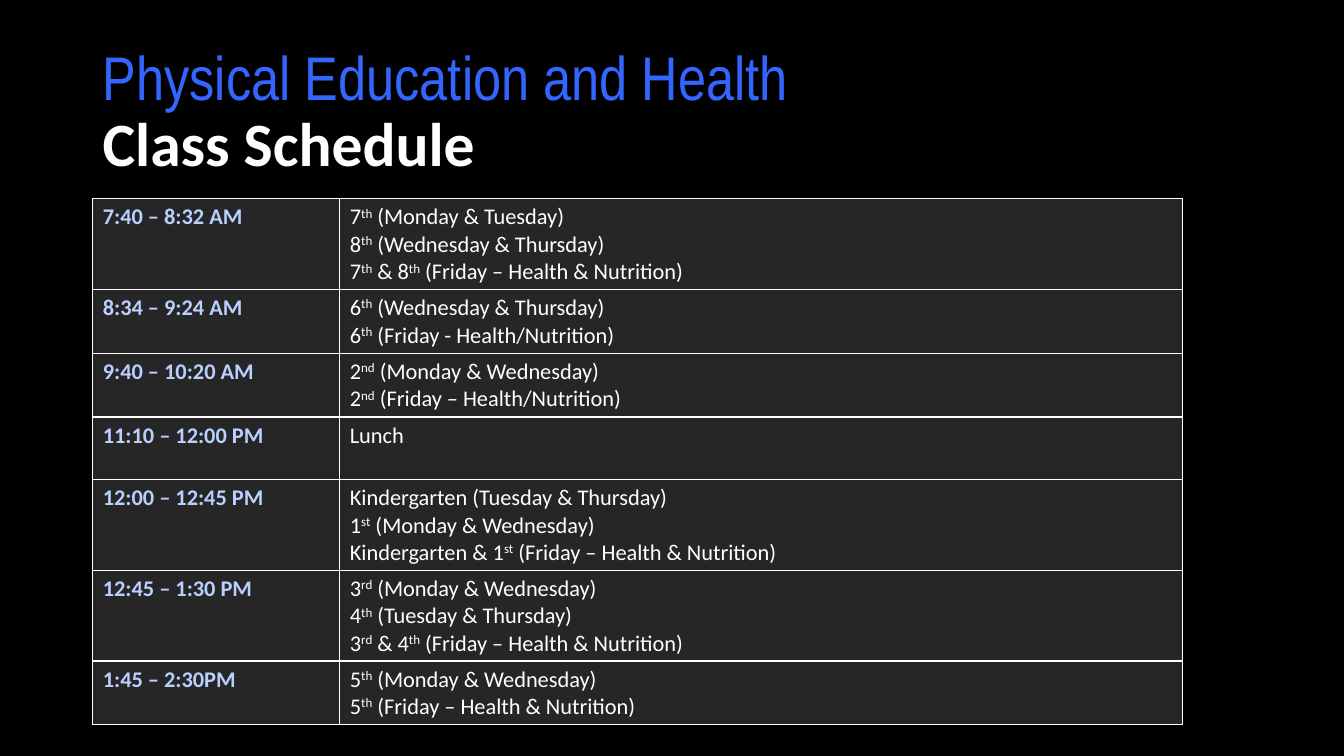
import dataclasses

import lxml.etree
import pptx
import pptx.dml.color
import pptx.enum.text
import pptx.oxml.ns
import pptx.table
import pptx.text.text
import pptx.util

BLACK = pptx.dml.color.RGBColor(0x00, 0x00, 0x00)
WHITE = pptx.dml.color.RGBColor(0xFF, 0xFF, 0xFF)
BLUE = pptx.dml.color.RGBColor(0x33, 0x66, 0xFF)
PALE_BLUE = pptx.dml.color.RGBColor(0xB9, 0xD0, 0xFF)
DARK_GREY = pptx.dml.color.RGBColor(0x26, 0x26, 0x26)

EMU_PER_PX = 9144
COLUMN_WIDTHS = (245, 836)
SUPERSCRIPT_MARK = "^"


@dataclasses.dataclass(frozen=True)
class TextStyle:
    font_name: str
    size: int
    color: pptx.dml.color.RGBColor
    bold: bool = False


@dataclasses.dataclass(frozen=True)
class Period:
    time: str
    classes: tuple[str, ...]
    height: int = 62


SUBJECT_STYLE = TextStyle("Arial Narrow", 44, BLUE)
HEADING_STYLE = TextStyle("Calibri", 44, WHITE, bold=True)
TIME_STYLE = TextStyle("Calibri", 16, PALE_BLUE, bold=True)
CLASS_STYLE = TextStyle("Calibri", 16, WHITE)

PERIODS = (
    Period("7:40 – 8:32 AM", (
        "7^th^ (Monday & Tuesday)",
        "8^th^ (Wednesday & Thursday)",
        "7^th^ & 8^th^ (Friday – Health & Nutrition)",
    ), 88),
    Period("8:34 – 9:24 AM", (
        "6^th^ (Wednesday & Thursday)",
        "6^th^ (Friday - Health/Nutrition)",
    )),
    Period("9:40 – 10:20 AM", (
        "2^nd^ (Monday & Wednesday)",
        "2^nd^ (Friday – Health/Nutrition)",
    )),
    Period("11:10 – 12:00 PM", ("Lunch",)),
    Period("12:00 – 12:45 PM", (
        "Kindergarten (Tuesday & Thursday)",
        "1^st^ (Monday & Wednesday)",
        "Kindergarten & 1^st^ (Friday – Health & Nutrition)",
    ), 88),
    Period("12:45 – 1:30 PM", (
        "3^rd^ (Monday & Wednesday)",
        "4^th^ (Tuesday & Thursday)",
        "3^rd^ & 4^th^ (Friday – Health & Nutrition)",
    ), 88),
    Period("1:45 – 2:30PM", (
        "5^th^ (Monday & Wednesday)",
        "5^th^ (Friday – Health & Nutrition)",
    )),
)


def px(length: int) -> pptx.util.Emu:
    return pptx.util.Emu(length * EMU_PER_PX)


def add_text(paragraph: pptx.text.text._Paragraph, text: str, style: TextStyle) -> None:
    for index, piece in enumerate(text.split(SUPERSCRIPT_MARK)):
        run = paragraph.add_run()
        run.text = piece
        run.font.name = style.font_name
        run.font.size = pptx.util.Pt(style.size)
        run.font.bold = style.bold
        run.font.color.rgb = style.color
        if index % 2:
            run._r.get_or_add_rPr().set("baseline", "30000")


def add_borders(cell: pptx.table._Cell) -> None:
    properties = cell._tc.get_or_add_tcPr()
    qualified = pptx.oxml.ns.qn
    for side in ("a:lnL", "a:lnR", "a:lnT", "a:lnB"):
        line = lxml.etree.SubElement(properties, qualified(side), w=str(pptx.util.Pt(1)))
        fill = lxml.etree.SubElement(line, qualified("a:solidFill"))
        lxml.etree.SubElement(fill, qualified("a:srgbClr"), val=str(WHITE))


def fill_cell(cell: pptx.table._Cell, lines: tuple[str, ...], style: TextStyle) -> None:
    add_borders(cell)
    cell.fill.solid()
    cell.fill.fore_color.rgb = DARK_GREY
    frame = cell.text_frame
    for index, line in enumerate(lines):
        paragraph = frame.add_paragraph() if index else frame.paragraphs[0]
        add_text(paragraph, line, style)


def add_title(slide: pptx.slide.Slide) -> None:
    frame = slide.shapes.add_textbox(px(92), px(40), px(1150), px(145)).text_frame
    frame.word_wrap = True
    frame.vertical_anchor = pptx.enum.text.MSO_ANCHOR.MIDDLE
    paragraph = frame.paragraphs[0]
    paragraph.line_spacing = 0.9
    add_text(paragraph, "Physical Education and Health ", SUBJECT_STYLE)
    paragraph.add_line_break()
    add_text(paragraph, "Class Schedule", HEADING_STYLE)


def add_schedule(slide: pptx.slide.Slide) -> None:
    height = sum(period.height for period in PERIODS)
    table = slide.shapes.add_table(
        len(PERIODS), len(COLUMN_WIDTHS), px(92), px(197), px(sum(COLUMN_WIDTHS)), px(height)
    ).table
    table.first_row = False
    table.horz_banding = False
    for column, width in zip(table.columns, COLUMN_WIDTHS):
        column.width = px(width)
    for row, period in zip(table.rows, PERIODS):
        row.height = px(period.height)
        fill_cell(row.cells[0], (period.time,), TIME_STYLE)
        fill_cell(row.cells[1], period.classes, CLASS_STYLE)


def main() -> None:
    presentation = pptx.Presentation()
    presentation.slide_width = px(1333)
    presentation.slide_height = px(750)
    slide = presentation.slides.add_slide(presentation.slide_layouts[6])
    slide.background.fill.solid()
    slide.background.fill.fore_color.rgb = BLACK
    add_title(slide)
    add_schedule(slide)
    presentation.save("out.pptx")


if __name__ == "__main__":
    main()
